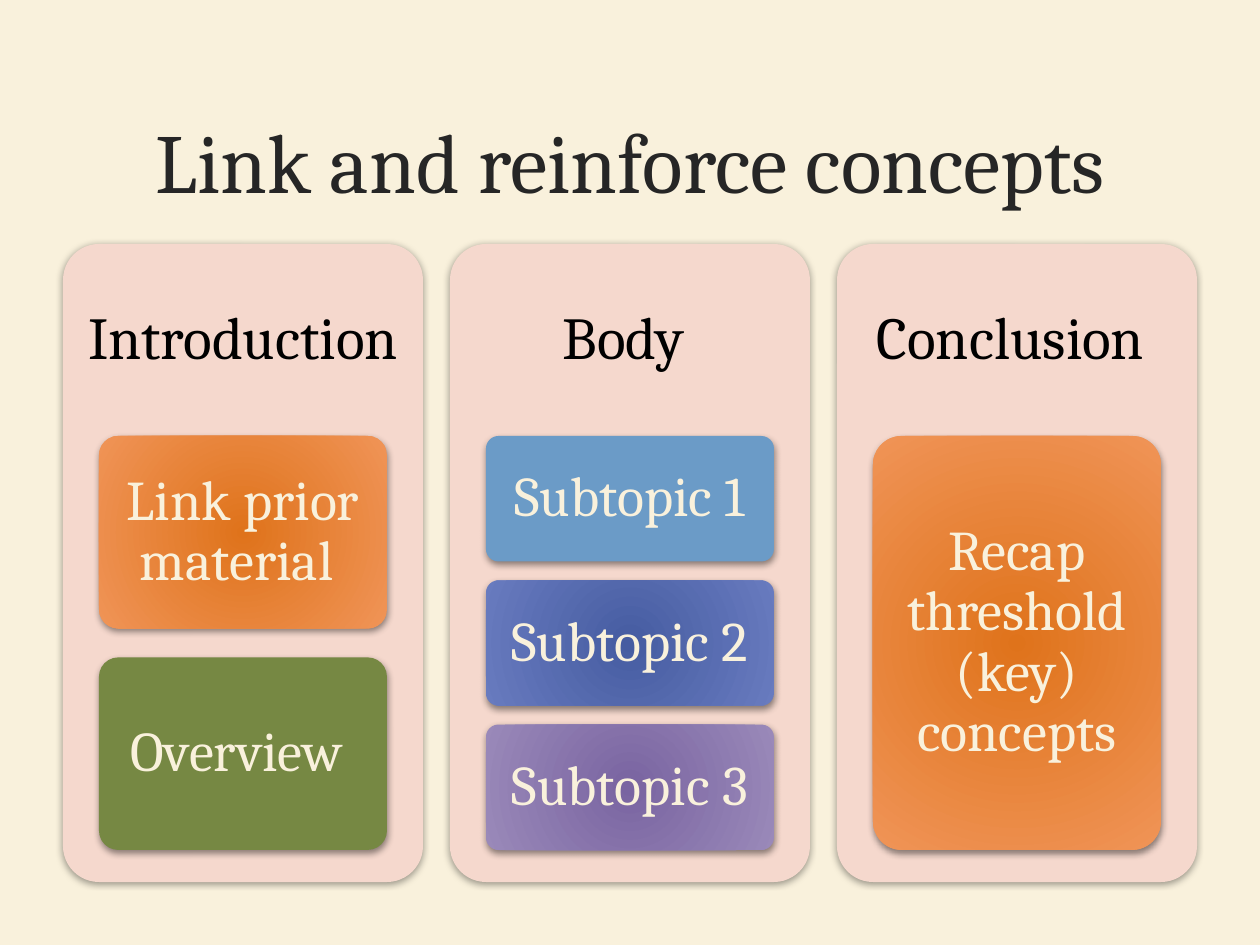
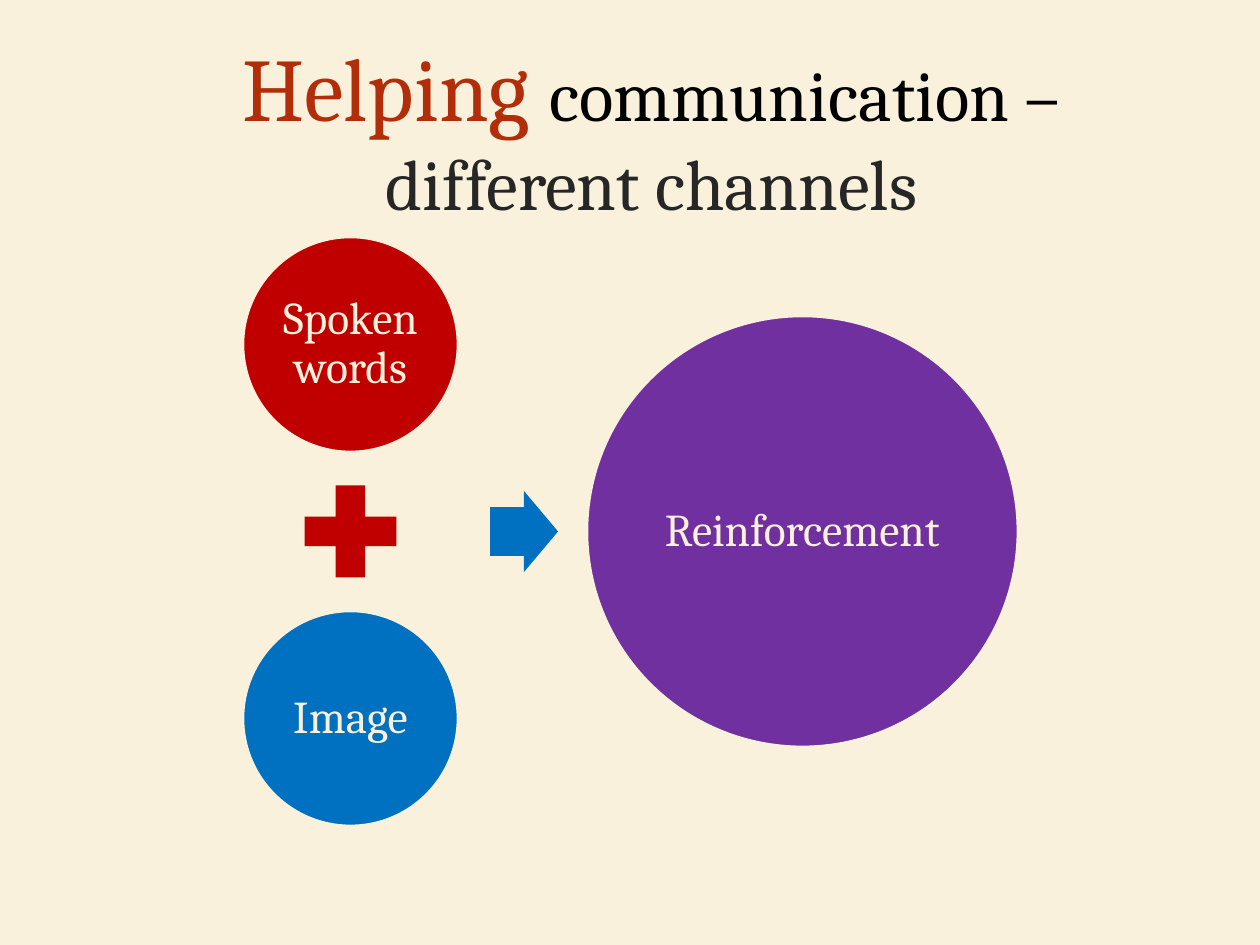
from lxml import etree
from pptx import Presentation
from pptx import util as u
from pptx.dml.color import RGBColor
from pptx.enum import shapes, text
from pptx.oxml.ns import qn

PX_PER_INCH = 126
FONT = "Cambria"
COLOURS = {
    "cream": "F9F1DC", "ink": "262626", "black": "000000", "rust": "B22D09",
    "panel": "F5D8CD", "green": "768843", "sky": "6B9BC7",
    "red": "C00000", "blue": "0070C0", "purple": "7030A0",
}
# Radial gradients: centre colour, edge colour
GRADIENTS = {
    "orange": ("DF731B", "F09457"),
    "indigo": ("465CA1", "687BBF"),
    "violet": ("7964A1", "9A89B9"),
}
# Opacity %, distance in points, direction in degrees
PANEL_SHADOW = (37, 1, 90)
CARD_SHADOW = (44, 2, 84)
SHADOW_BLUR = 4

COLUMNS = [
    ("Introduction", [("Link prior material ", "orange"), ("Overview ", "green")]),
    ("Body ", [("Subtopic 1", "sky"), ("Subtopic 2", "indigo"), ("Subtopic 3", "violet")]),
    ("Conclusion ", [("Recap threshold (key) concepts", "orange")]),
]


def px(length):
    return u.Emu(round(length * 914400 / PX_PER_INCH))


def rgb(name):
    return RGBColor.from_string(COLOURS[name])


# --- Text ---

def format_run(run, size, colour):
    run.font.name = FONT
    run.font.size = u.Pt(size)
    run.font.color.rgb = rgb(colour)


def prepare_frame(shape, margins=None):
    frame = shape.text_frame
    frame.word_wrap = True
    frame.vertical_anchor = text.MSO_ANCHOR.MIDDLE
    if margins:
        side, top = margins
        frame.margin_left = frame.margin_right = px(side)
        frame.margin_top = frame.margin_bottom = px(top)
    return frame


def write_label(shape, label, size, colour, margins=None, spacing=0.9):
    frame = prepare_frame(shape, margins)
    frame.text = label
    paragraph = frame.paragraphs[0]
    paragraph.alignment = text.PP_ALIGN.CENTER
    paragraph.line_spacing = spacing
    format_run(paragraph.runs[0], size, colour)


def add_text_box(slide, left, top, width, height):
    return slide.shapes.add_textbox(px(left), px(top), px(width), px(height))


def add_title(slide, box, lines):
    """Each line is a list of (words, size, colour) runs."""
    paragraph = prepare_frame(add_text_box(slide, *box)).paragraphs[0]
    paragraph.alignment = text.PP_ALIGN.CENTER
    for index, line in enumerate(lines):
        if index:
            paragraph.add_line_break()
        for words, size, colour in line:
            run = paragraph.add_run()
            run.text = words
            format_run(run, size, colour)


# --- Shapes ---

def paint_gradient(shape, name):
    shape.fill.gradient()
    for stop, colour in zip(shape.fill.gradient_stops, GRADIENTS[name]):
        stop.color.rgb = RGBColor.from_string(colour)
    gradient = shape.element.spPr.find(qn("a:gradFill"))
    gradient.remove(gradient.find(qn("a:lin")))
    circle = etree.SubElement(gradient, qn("a:path"), path="circle")
    etree.SubElement(circle, qn("a:fillToRect"), l="40000", t="100000", r="40000", b="100000")


def add_shadow(shape, opacity, distance, direction):
    effects = shape.element.spPr.find(qn("a:effectLst"))
    shadow = etree.SubElement(
        effects, qn("a:outerShdw"), blurRad=str(u.Pt(SHADOW_BLUR)), dist=str(u.Pt(distance)),
        dir=str(direction * 60000), rotWithShape="0")
    colour = etree.SubElement(shadow, qn("a:srgbClr"), val=COLOURS["black"])
    etree.SubElement(colour, qn("a:alpha"), val=str(opacity * 1000))


def add_shape(slide, kind, left, top, width, height, fill):
    shape = slide.shapes.add_shape(kind, px(left), px(top), px(width), px(height))
    shape.shadow.inherit = False
    shape.line.fill.background()
    if fill in GRADIENTS:
        paint_gradient(shape, fill)
    else:
        shape.fill.solid()
        shape.fill.fore_color.rgb = rgb(fill)
    return shape


def add_rounded(slide, left, top, width, height, fill, shadow):
    shape = add_shape(slide, shapes.MSO_SHAPE.ROUNDED_RECTANGLE, left, top, width, height, fill)
    shape.adjustments[0] = 0.1
    add_shadow(shape, *shadow)
    return shape


def add_column(slide, left, heading, cards):
    top, width, heading_height, inset = 244, 360, 192, 36
    add_rounded(slide, left, top, width, 638, "panel", PANEL_SHADOW)
    write_label(add_text_box(slide, left, top, width, heading_height),
                heading, 34, "black", (18, 18))
    # Cards fill the stack; each gap is 15% of a card's height
    stack_height, gap_ratio = 414, 0.15
    card_height = stack_height / (len(cards) + gap_ratio * (len(cards) - 1))
    for index, (label, fill) in enumerate(cards):
        card_top = top + heading_height + index * card_height * (1 + gap_ratio)
        card = add_rounded(slide, left + inset, card_top, width - 2 * inset, card_height,
                           fill, CARD_SHADOW)
        write_label(card, label, 32, "cream", (11, 9))


def add_circle(slide, left, top, diameter, label, fill):
    circle = add_shape(slide, shapes.MSO_SHAPE.OVAL, left, top, diameter, diameter, fill)
    circle.line.color.rgb = rgb("cream")
    circle.line.width = u.Pt(1.5)
    write_label(circle, label, 26, "cream", (5, 5))


# --- Slides ---

def add_slide(presentation):
    slide = presentation.slides.add_slide(presentation.slide_layouts[6])
    slide.background.fill.solid()
    slide.background.fill.fore_color.rgb = rgb("cream")
    return slide


def build_concepts_slide(presentation):
    slide = add_slide(presentation)
    add_title(slide, (76, 60, 1108, 199), [[("Link and reinforce concepts", 48, "ink")]])
    for index, (heading, cards) in enumerate(COLUMNS):
        add_column(slide, 63 + index * 387, heading, cards)


def build_channels_slide(presentation):
    slide = add_slide(presentation)

    # Two inputs with a plus between them
    left, top, small, plus, gap = 243, 237, 215, 125, 17
    plus_top = top + small + gap
    add_circle(slide, left, top, small, "Spoken words", "red")
    add_shape(slide, shapes.MSO_SHAPE.MATH_PLUS, left + (small - plus) / 2, plus_top,
              plus, plus, "red")
    add_circle(slide, left, plus_top + plus + gap, small, "Image", "blue")

    # Arrow and result, centred on the plus
    middle = plus_top + plus / 2
    arrow_height, large = 81, 431
    arrow = add_shape(slide, shapes.MSO_SHAPE.RIGHT_ARROW, 490, middle - arrow_height / 2,
                      68, arrow_height, "blue")
    arrow.adjustments[0] = 0.6
    arrow.adjustments[1] = 0.5
    add_circle(slide, 587, middle - large / 2, large, "Reinforcement", "purple")

    add_title(slide, (63, 42, 1177, 173), [
        [("Helping ", 51, "rust"), ("communication –", 40.8, "black")],
        [("different channels", 40.8, "ink")],
    ])


def main():
    presentation = Presentation()
    presentation.slide_width = px(1260)
    presentation.slide_height = px(945)
    build_concepts_slide(presentation)
    build_channels_slide(presentation)
    presentation.save("out.pptx")


if __name__ == "__main__":
    main()
